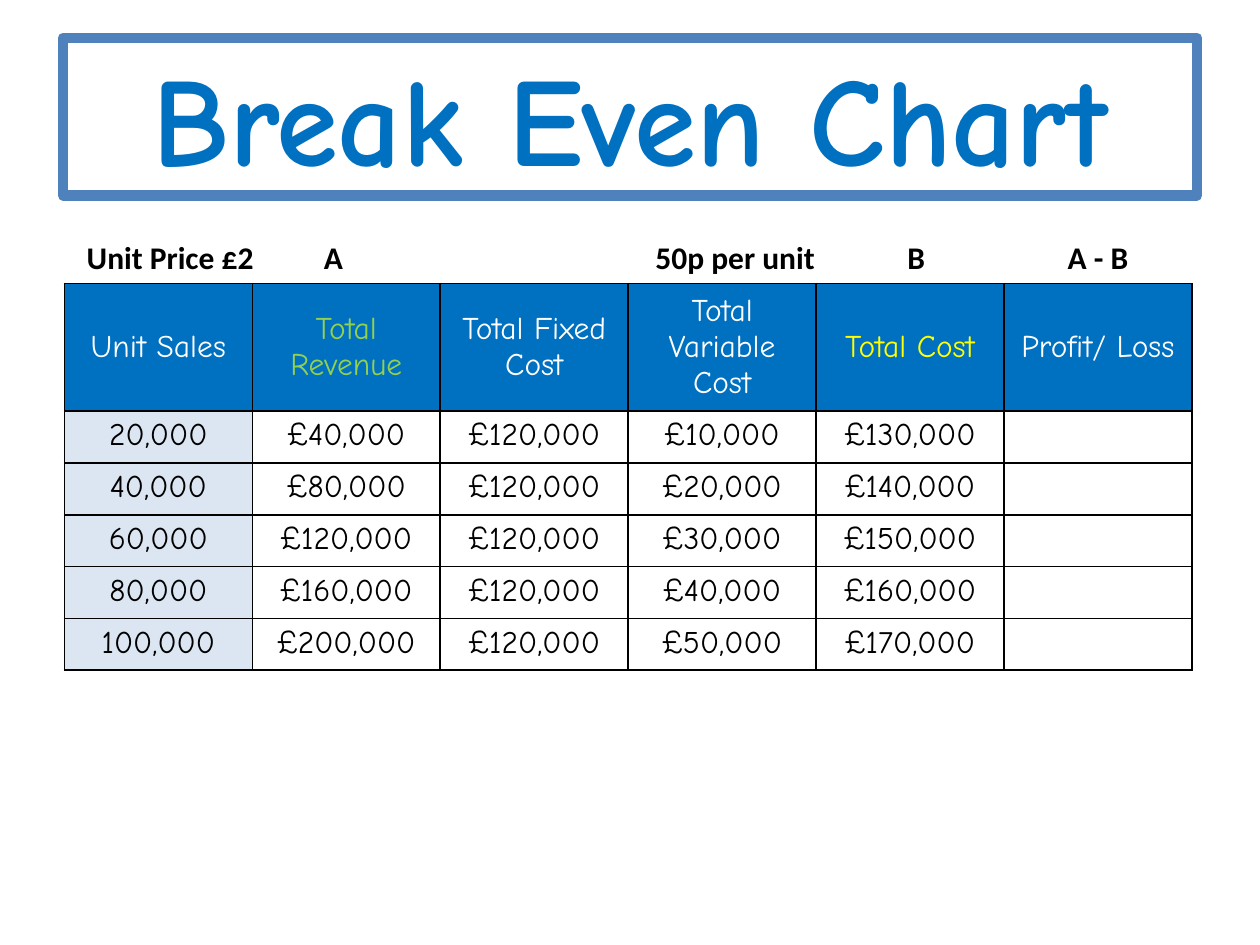
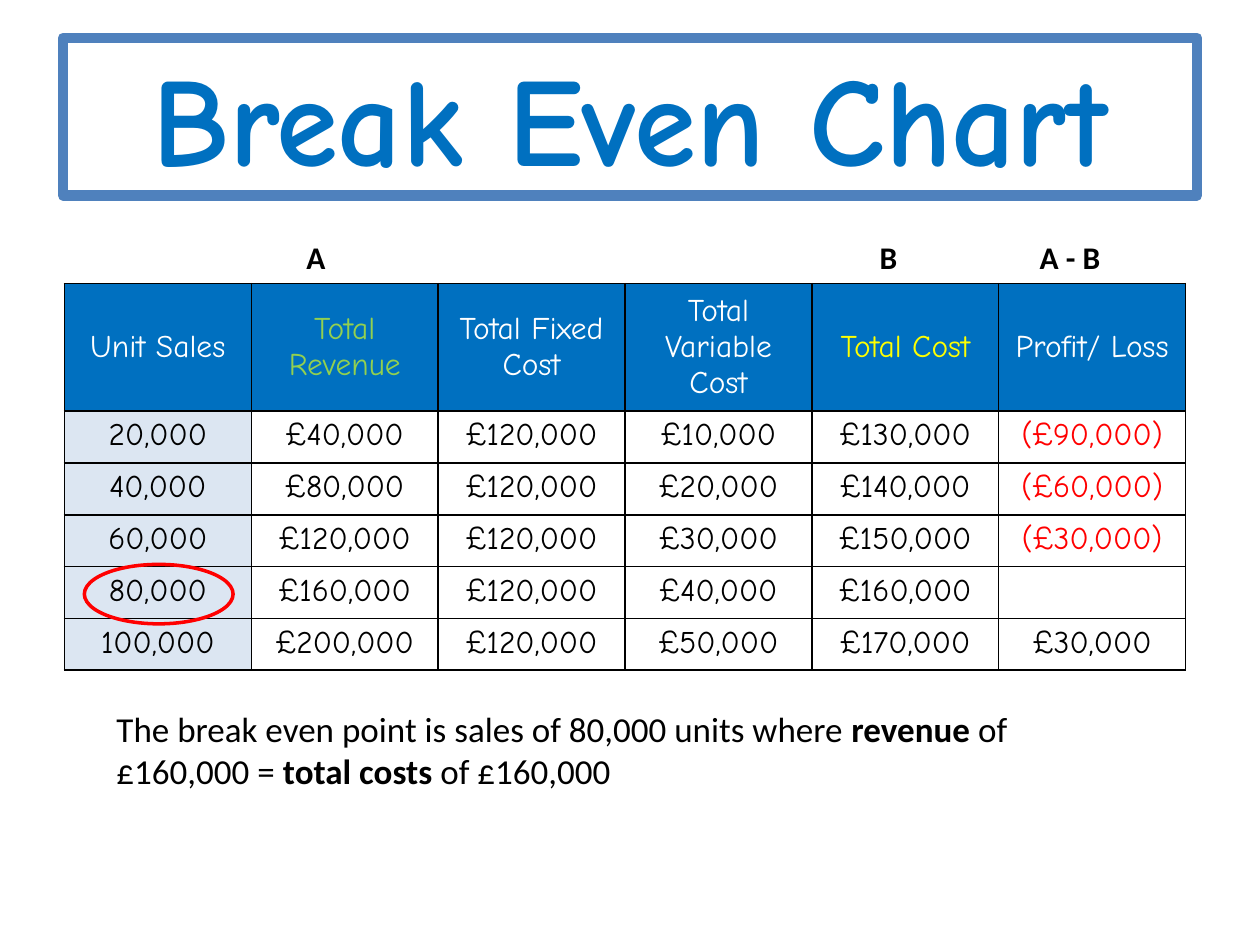
from lxml import etree
from pptx import Presentation
from pptx.dml.color import RGBColor
from pptx.enum.shapes import MSO_SHAPE
from pptx.enum.text import MSO_ANCHOR, MSO_AUTO_SIZE, PP_ALIGN
from pptx.oxml.ns import qn
from pptx.util import Pt

CENTER, LEFT = PP_ALIGN.CENTER, PP_ALIGN.LEFT
MIDDLE, TOP = MSO_ANCHOR.MIDDLE, MSO_ANCHOR.TOP
NO_AUTOFIT = MSO_AUTO_SIZE.NONE
OVAL = MSO_SHAPE.OVAL
TITLE_ONLY = 5

# Shared style
HEADING_FONT, BODY_FONT = "Comic Neue", "Calibri"
BLUE, FRAME_BLUE, PALE_BLUE = "0070C0", "4F81BD", "DCE6F2"
WHITE, BLACK, RED = "FFFFFF", "000000", "FF0000"
GREEN, YELLOW = "92D050", "FFFF00"

# Break-even figures
UNIT_PRICE, UNIT_COST, FIXED_COST = 2, 0.5, 120000
UNIT_SALES = range(20000, 100001, 20000)
HEADERS = [("Unit Sales", WHITE), ("Total Revenue", GREEN), ("Total Fixed Cost", WHITE),
           ("Total Variable Cost", WHITE), ("Total Cost", YELLOW), ("Profit/ Loss", WHITE)]

TABLE_LEFT, TABLE_TOP = 36.8, 162
HEADER_HEIGHT, ROW_HEIGHT = 73, 29.6


def color(hex_value):
    return RGBColor.from_string(hex_value)


def add_text(paragraph, text, font=BODY_FONT, size=18, hex_color=BLACK, bold=False, align=LEFT):
    paragraph.alignment = align
    run = paragraph.add_run()
    run.text = text
    run.font.name = font
    run.font.size = Pt(size)
    run.font.bold = bold
    run.font.color.rgb = color(hex_color)


def add_title(slide, text):
    title = slide.shapes.title
    title.left, title.top, title.width, title.height = Pt(36), Pt(21.6), Pt(648), Pt(90)
    title.fill.solid()
    title.fill.fore_color.rgb = color(WHITE)
    title.line.color.rgb = color(FRAME_BLUE)
    title.line.width = Pt(6)
    frame = title.text_frame
    frame.auto_size = NO_AUTOFIT
    frame.vertical_anchor = MIDDLE
    add_text(frame.paragraphs[0], text, font=HEADING_FONT, size=72, hex_color=BLUE,
             bold=True, align=CENTER)


def add_text_box(slide, left, top, width, height):
    """Return the first paragraph of a new wrapping text box."""
    box = slide.shapes.add_textbox(Pt(left), Pt(top), Pt(width), Pt(height))
    box.text_frame.word_wrap = True
    return box.text_frame.paragraphs[0]


def add_column_labels(slide, left, width, text, tab_stops):
    paragraph = add_text_box(slide, left, 132.5, width, 29)
    add_text(paragraph, text, bold=True)
    tabs = etree.SubElement(paragraph._p.get_or_add_pPr(), qn("a:tabLst"))
    for stop in tab_stops:
        etree.SubElement(tabs, qn("a:tab"), pos=str(Pt(stop)), algn="l")


def add_borders(cell):
    properties = cell._tc.get_or_add_tcPr()
    for side in ("a:lnL", "a:lnR", "a:lnT", "a:lnB"):
        line = etree.SubElement(properties, qn(side), w=str(Pt(1)))
        fill = etree.SubElement(line, qn("a:solidFill"))
        etree.SubElement(fill, qn("a:srgbClr"), val=BLACK)


def fill_cell(cell, text, fill, hex_color=BLACK, anchor=TOP):
    add_borders(cell)
    cell.fill.solid()
    cell.fill.fore_color.rgb = color(fill)
    cell.vertical_anchor = anchor
    if text:
        add_text(cell.text_frame.paragraphs[0], text, font=HEADING_FONT,
                 hex_color=hex_color, align=CENTER)


def pounds(amount):
    return f"£{amount:,.0f}"


def profit_text(profit):
    """Losses stand in brackets; the break-even row stays empty."""
    if profit < 0:
        return f"({pounds(-profit)})"
    return pounds(profit) if profit else ""


def add_break_even_table(slide, column_width, show_profit):
    row_count, column_count = len(UNIT_SALES) + 1, len(HEADERS)
    height = HEADER_HEIGHT + ROW_HEIGHT * len(UNIT_SALES)
    table = slide.shapes.add_table(row_count, column_count, Pt(TABLE_LEFT), Pt(TABLE_TOP),
                                   Pt(column_width * column_count), Pt(height)).table
    table.first_row = table.horz_banding = False
    for column in table.columns:
        column.width = Pt(column_width)
    for index, row in enumerate(table.rows):
        row.height = Pt(ROW_HEIGHT if index else HEADER_HEIGHT)

    for column, (header, header_color) in enumerate(HEADERS):
        fill_cell(table.cell(0, column), header, BLUE, header_color, MIDDLE)
    for row, units in enumerate(UNIT_SALES, start=1):
        revenue, variable_cost = units * UNIT_PRICE, units * UNIT_COST
        total_cost = FIXED_COST + variable_cost
        profit = revenue - total_cost
        amounts = [pounds(value) for value in (revenue, FIXED_COST, variable_cost, total_cost)]
        fill_cell(table.cell(row, 0), f"{units:,}", PALE_BLUE)
        for column, amount in enumerate(amounts, start=1):
            fill_cell(table.cell(row, column), amount, WHITE)
        fill_cell(table.cell(row, column_count - 1), profit_text(profit) if show_profit else "",
                  WHITE, RED if profit < 0 else BLACK)


def add_highlight_ring(slide, left, top, width, height):
    ring = slide.shapes.add_shape(OVAL, Pt(left), Pt(top), Pt(width), Pt(height))
    ring.shadow.inherit = False
    ring.fill.background()
    ring.line.color.rgb = color(RED)
    ring.line.width = Pt(2)


def add_chart_slide(presentation, column_width, show_profit):
    slide = presentation.slides.add_slide(presentation.slide_layouts[TITLE_ONLY])
    add_title(slide, "Break Even Chart")
    add_break_even_table(slide, column_width, show_profit)
    return slide


def main():
    presentation = Presentation()
    presentation.slide_width, presentation.slide_height = Pt(720), Pt(540)

    # Slide 1: profit column left to complete
    slide = add_chart_slide(presentation, 107.4, show_profit=False)
    add_column_labels(slide, 42.5, 623.5, "Unit Price £2\tA\t50p per unit\tB\tA - B",
                      (135.5, 325, 469, 560.5))

    # Slide 2: completed table with the break-even point
    slide = add_chart_slide(presentation, 106.8, show_profit=True)
    add_column_labels(slide, 156, 510.5, "\tA\tB\tA - B", (12, 339.5, 431))
    conclusion = add_text_box(slide, 59.5, 400.5, 595.5, 55.5)
    for text, bold in (("The break even point is sales of 80,000 units where ", False),
                       ("revenue ", True), ("of £160,000 = ", False),
                       ("total costs ", True), ("of £160,000", False)):
        add_text(conclusion, text, size=20, bold=bold)
    add_highlight_ring(slide, 48.2, 322.5, 85, 34)

    presentation.save("out.pptx")


if __name__ == "__main__":
    main()
